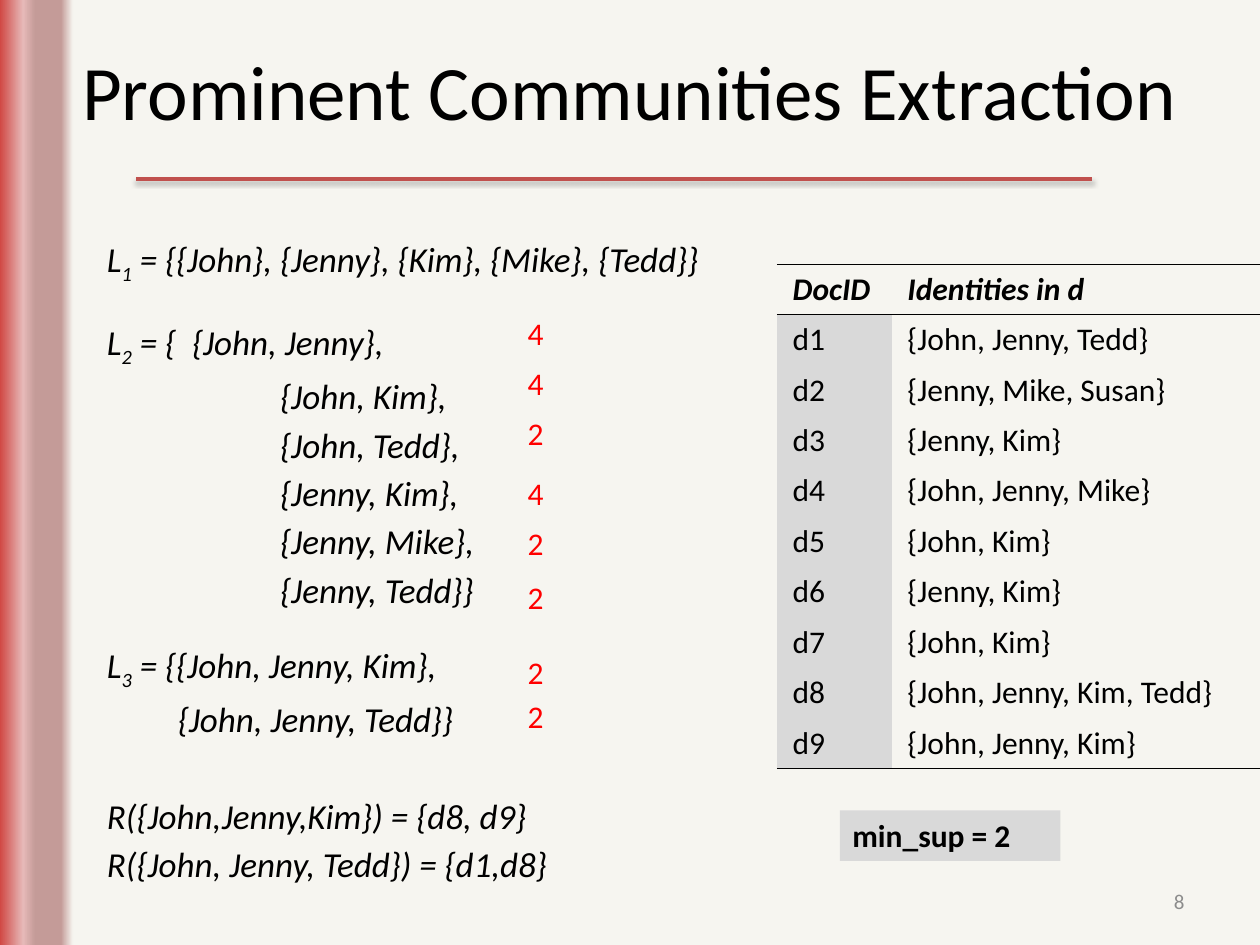
"""Build the slide on extracting prominent communities from documents."""
from dataclasses import dataclass

from lxml import etree
from pptx import Presentation
from pptx import util as u
from pptx.dml.color import RGBColor
from pptx.enum import shapes, text
from pptx.oxml import parse_xml
from pptx.oxml.ns import nsdecls, qn

COLORS = {
    "paper": "F6F5F0", "ink": "000000", "count": "FF0000", "grey": "D9D9D9",
    "number": "8C8C8C", "rule": "C0504D", "red": "CE3B37", "pink": "E6B9B8",
    "mauve": "C49B98",
}
FONT = "Calibri"
NO_GRID = "{2D5ABB26-0587-4C30-8999-92F81FD0307C}"
BAR_STOPS = [(0, "red"), (34, "pink"), (50, "mauve"), (84, "mauve"), (100, "paper")]


@dataclass
class Area:
    left: float
    top: float
    width: float
    height: float

    def emu(self) -> list[int]:
        return [u.Pt(n) for n in (self.left, self.top, self.width, self.height)]


@dataclass
class Style:
    size: float
    color: str = "ink"
    bold: bool = False
    italic: bool = False
    align: text.PP_ALIGN = text.PP_ALIGN.LEFT


@dataclass
class Line:
    words: str
    level: str = ""
    margin: float = 27
    hanging: float = -27
    before: float = 3.6


BODY = [
    Line(" = {{John}, {Jenny}, {Kim}, {Mike}, {Tedd}}", "1"),
    Line(" = {  {John, Jenny},", "2", before=20.4),
    *(Line(f"{{{pair}", margin=99, hanging=0) for pair in (
        "John, Kim},", "John, Tedd},", "Jenny, Kim},", "Jenny, Mike},", "Jenny, Tedd}}")),
    Line(" = {{John, Jenny, Kim},", "3", before=19),
    Line("{John, Jenny, Tedd}}", margin=40.5, hanging=0),
    Line("R({John,Jenny,Kim}) = {d8, d9}", before=31.6),
    Line("R({John, Jenny, Tedd}) = {d1,d8}"),
]
COUNTS = [(175.7, "4"), (204.5, "4"), (233.3, "2"), (267.1, "4"),
          (295.9, "2"), (326.9, "2"), (369.4, "2"), (394.6, "2")]
DOCUMENTS = [
    "John, Jenny, Tedd", "Jenny, Mike, Susan", "Jenny, Kim", "John, Jenny, Mike",
    "John, Kim", "Jenny, Kim", "John, Kim", "John, Jenny, Kim, Tedd", "John, Jenny, Kim",
]


def rgb(name: str) -> RGBColor:
    return RGBColor.from_string(COLORS[name])


def set_style(para, style: Style) -> None:
    font = para.font
    font.name, font.size = FONT, u.Pt(style.size)
    font.bold, font.italic = style.bold, style.italic
    font.color.rgb = rgb(style.color)
    para.alignment = style.align


def add_text(page, area: Area, words: str, style: Style, middle: bool = False):
    box = page.shapes.add_textbox(*area.emu())
    frame = box.text_frame
    frame.word_wrap = True
    if middle:
        frame.vertical_anchor = text.MSO_ANCHOR.MIDDLE
    frame.text = words
    set_style(frame.paragraphs[0], style)
    return box


def add_bar(page, area: Area) -> None:
    bar = page.shapes.add_shape(shapes.MSO_SHAPE.RECTANGLE, *area.emu())
    bar.shadow.inherit = False
    bar.line.fill.background()
    bar.fill.gradient()
    bar.fill.gradient_angle = 0
    stops = bar.fill._fill._gradFill.find(qn("a:gsLst"))
    for stop in list(stops):
        stops.remove(stop)
    for position, name in BAR_STOPS:
        stop = etree.SubElement(stops, qn("a:gs"), pos=str(position * 1000))
        etree.SubElement(stop, qn("a:srgbClr"), val=COLORS[name])


def add_rule(page, left: float, right: float, y: float) -> None:
    rule = page.shapes.add_connector(
        shapes.MSO_CONNECTOR.STRAIGHT, u.Pt(left), u.Pt(y), u.Pt(right), u.Pt(y))
    rule.line.color.rgb = rgb("rule")
    rule.line.width = u.Pt(2)
    rule._element.spPr.append(parse_xml(
        f'<a:effectLst {nsdecls("a")}><a:outerShdw blurRad="{u.Pt(3.1)}" dist="{u.Pt(1.6)}" '
        f'dir="5400000" rotWithShape="0"><a:srgbClr val="{COLORS["ink"]}">'
        '<a:alpha val="38000"/></a:srgbClr></a:outerShdw></a:effectLst>'))


def add_body(page, area: Area, lines: list[Line]) -> None:
    frame = page.shapes.add_textbox(*area.emu()).text_frame
    frame.word_wrap = True
    for index, line in enumerate(lines):
        para = frame.add_paragraph() if index else frame.paragraphs[0]
        set_style(para, Style(20, italic=True))
        para.space_before = u.Pt(line.before)
        props = para._p.get_or_add_pPr()
        props.set("marL", str(u.Pt(line.margin)))
        props.set("indent", str(u.Pt(line.hanging)))
        if line.level:
            para.add_run().text = "L"
            level = para.add_run()
            level.text = line.level
            level.font._element.set("baseline", "-25000")
        para.add_run().text = line.words


def add_border(cell, side: str) -> None:
    cell._tc.get_or_add_tcPr().append(parse_xml(
        f'<a:{side} {nsdecls("a")} w="{u.Pt(1)}"><a:solidFill>'
        f'<a:srgbClr val="{COLORS["ink"]}"/></a:solidFill></a:{side}>'))


def add_documents(page, area: Area, widths: list[float], rows: list[tuple[str, str]]) -> None:
    frame = page.shapes.add_table(len(rows), len(widths), *area.emu())
    table = frame.table
    table.horz_banding = table.first_row = False
    table._tbl.tblPr.find(qn("a:tableStyleId")).text = NO_GRID
    for column, width in zip(table.columns, widths):
        column.width = u.Pt(width)
    for r, row in enumerate(rows):
        for c, words in enumerate(row):
            cell = table.cell(r, c)
            cell.margin_left = cell.margin_right = u.Pt(9)
            cell.margin_top = cell.margin_bottom = u.Pt(3.4)
            cell.text = words
            header = r == 0
            set_style(cell.text_frame.paragraphs[0], Style(18, bold=header, italic=header))
            if header:
                add_border(cell, "lnT")
            if r in (0, len(rows) - 1):
                add_border(cell, "lnB")
            if c == 0 and not header:
                cell.fill.solid()
                cell.fill.fore_color.rgb = rgb("grey")
            else:
                cell.fill.background()


def main() -> None:
    deck = Presentation()
    deck.slide_width, deck.slide_height = u.Pt(720), u.Pt(540)
    page = deck.slides.add_slide(deck.slide_layouts[6])
    page.background.fill.solid()
    page.background.fill.fore_color.rgb = rgb("paper")

    add_bar(page, Area(-1.4, 0, 43.2, 540))
    add_rule(page, 77.8, 624.2, 102.2)
    add_text(page, Area(36, 6, 648, 90), "Prominent Communities Extraction",
             Style(44, align=text.PP_ALIGN.CENTER), middle=True)
    add_body(page, Area(54, 132, 384, 372), BODY)
    add_text(page, Area(516, 500.5, 168, 28.8), "8",
             Style(12, "number", align=text.PP_ALIGN.RIGHT), middle=True)
    for top, count in COUNTS:
        add_text(page, Area(294, top, 24, 29), count,
                 Style(18, "count", align=text.PP_ALIGN.CENTER))
    rows = [("DocID", "Identities in d")]
    rows += [(f"d{n}", f"{{{names}}}") for n, names in enumerate(DOCUMENTS, 1)]
    add_documents(page, Area(444, 151, 276, 288.5), [65.6, 210.4], rows)
    support = add_text(page, Area(480, 463, 126, 29), "min_sup = 2", Style(18, bold=True))
    support.fill.solid()
    support.fill.fore_color.rgb = rgb("grey")
    deck.save("out.pptx")


if __name__ == "__main__":
    main()
